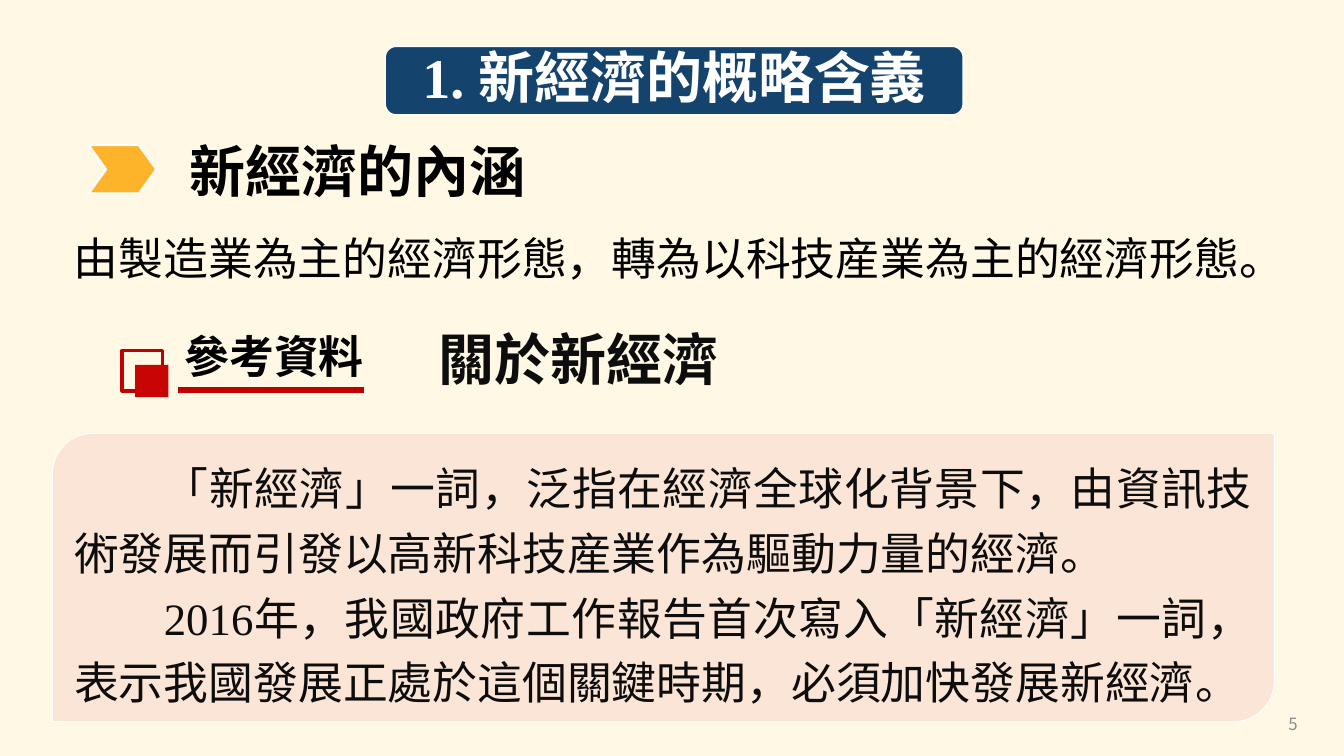
from lxml import etree
from pptx import Presentation
from pptx import util as u
from pptx.dml.color import RGBColor
from pptx.enum import shapes, text
from pptx.oxml import ns

color = RGBColor.from_string
TC, SC = "Noto Sans CJK TC", "Noto Sans CJK SC"

presentation = Presentation()
presentation.slide_width = u.Inches(13.33)
presentation.slide_height = u.Inches(7.5)
column = presentation.slide_width / 100
row = presentation.slide_height / 100
slide = presentation.slides.add_slide(presentation.slide_layouts[5])
slide.background.fill.solid()
slide.background.fill.fore_color.rgb = color("FFF8E5")


def add_block(kind, left, top, width, height, fill=None, line=None, weight=1):
    """Add a preset shape, or a text box if kind is None, on the 100 x 100 grid."""
    place = [int(n) for n in (left * column, top * row, width * column, height * row)]
    if kind is None:
        return slide.shapes.add_textbox(*place)
    shape = slide.shapes.add_shape(kind, *place)
    shape.shadow.inherit = False
    if fill:
        shape.fill.solid()
        shape.fill.fore_color.rgb = color(fill)
    else:
        shape.fill.background()
    if line:
        shape.line.color.rgb = color(line)
        shape.line.width = u.Pt(weight)
    else:
        shape.line.fill.background()
    return shape


def write(shape, *paragraphs, size=32, font="Roboto", ink="000000", bold=False,
          align="LEFT", anchor="TOP", spacing=None, indent=0, wrap=True):
    """Fill a shape with paragraphs, each a list of (text, East Asian font)."""
    frame = shape.text_frame
    frame.word_wrap = wrap
    frame.auto_size = text.MSO_AUTO_SIZE.NONE
    frame.vertical_anchor = text.MSO_ANCHOR[anchor]
    for index, runs in enumerate(paragraphs):
        paragraph = frame.add_paragraph() if index else frame.paragraphs[0]
        paragraph.alignment = text.PP_ALIGN[align]
        if spacing:
            paragraph.line_spacing = spacing
        if indent:
            paragraph._p.get_or_add_pPr().set("indent", str(u.Inches(indent)))
        for words, east_asian in runs:
            run = paragraph.add_run()
            run.text = words
            run.font.size = u.Pt(size)
            run.font.bold = bold
            run.font.name = font
            run.font.color.rgb = color(ink)
            latin = run.font._element.find(ns.qn("a:latin"))
            latin.addnext(etree.Element(ns.qn("a:ea"), typeface=east_asian))


# Title on its blue panel
panel = add_block(shapes.MSO_SHAPE.ROUNDED_RECTANGLE, 28.66, 6.13, 43, 9.07,
                  fill="14446E", line="FFFFFF")
panel.adjustments[0] = 0.16
title = slide.shapes.title
title.left, title.top = panel.left, panel.top
title.width, title.height = panel.width, panel.height
slide.shapes._spTree.append(title._element)
write(title, [("1. 新經濟的概略含義", TC)], size=40, font="Times New Roman",
      ink="FFFFFF", bold=True, align="CENTER", anchor="MIDDLE", spacing=0.9)

# Section heading and its sentence
chevron = add_block(shapes.MSO_SHAPE.CHEVRON, 6.6, 19.2, 5.03, 6.4,
                    fill="FDB42A", line="FFFFFF", weight=1.5)
chevron.adjustments[0] = 0.36
write(add_block(None, 13.35, 18.93, 27.53, 8.8), [("新經濟的內涵", TC)],
      size=40, bold=True, spacing=u.Pt(40))
write(add_block(None, 4.75, 29.6, 94.5, 8.8),
      [("由製造業為主的經濟形態，轉為以科技産業為主的經濟形態。", TC)],
      spacing=u.Pt(40), wrap=False)

# Reference label with squares and underline
add_block(shapes.MSO_SHAPE.RECTANGLE, 9.08, 46.4, 3, 5.33, line="C00000", weight=2.25)
add_block(shapes.MSO_SHAPE.RECTANGLE, 10.05, 48.27, 2.48, 4.27, fill="C80404")
write(add_block(None, 12.98, 42.8, 18.9, 8.53), [("參考資料", TC)], bold=True)
underline = slide.shapes.add_connector(
    shapes.MSO_CONNECTOR.STRAIGHT, int(13.28 * column), int(51.6 * row),
    int(27.08 * column), int(51.6 * row))
underline.line.color.rgb = color("C00000")
underline.line.width = u.Pt(4.5)
etree.SubElement(underline._element.spPr, ns.qn("a:effectLst"))
write(add_block(None, 31.88, 42.27, 22.58, 10.27), [("關於新經濟", TC)],
      size=40, ink="0D0D0D", bold=True, wrap=False)

# Explanation
explanation = add_block(shapes.MSO_SHAPE.ROUND_2_DIAG_RECTANGLE, 3.9, 57.33, 90.92, 38.13,
                        fill="FBE5D6", line="FFFFFF", weight=0.75)
explanation.adjustments[0] = 0.14
write(explanation,
      [("「新經濟」一詞，泛指在經濟全球化背景下，由資訊技術發展而引發以高新科技産業作為驅動力量的經濟。", SC)],
      [("2016年，我國政府工作報告首次寫入「新經濟」一詞", SC), ("，", TC),
       ("表示我國發展正處於這個關鍵時期，必須加快發展新經濟", SC), ("。", TC)],
      font="Times New Roman", ink="0D0D0D", align="JUSTIFY", spacing=u.Pt(46.2), indent=0.89)

# Slide number
write(add_block(None, 74.79, 93.07, 22.5, 5.33), [("5", SC)], size=12, font=SC,
      ink="8C8C8C", align="RIGHT", anchor="MIDDLE")

presentation.save("out.pptx")
